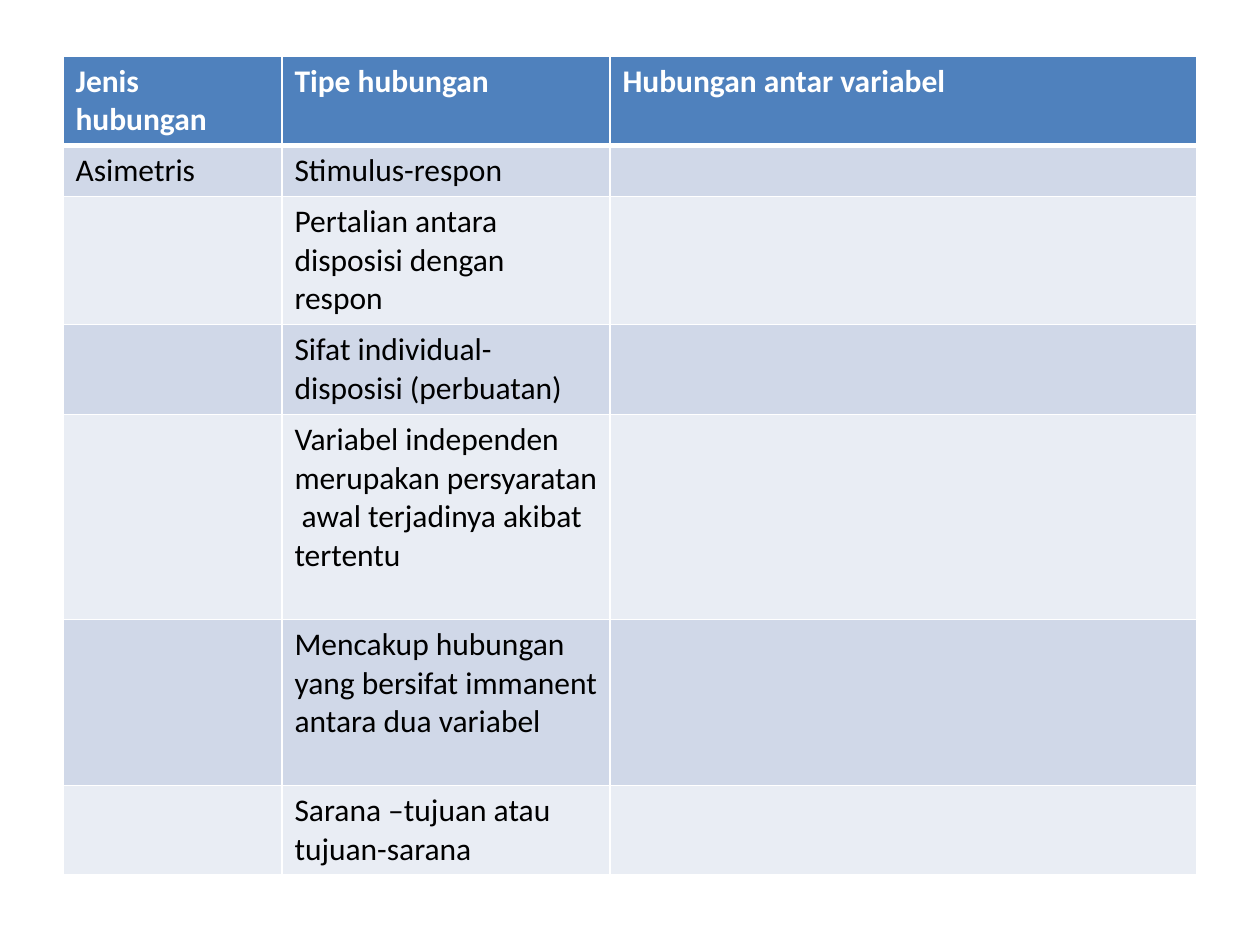
from lxml.etree import SubElement
from pptx import Presentation
from pptx.dml.color import RGBColor
from pptx.oxml.ns import qn
from pptx.util import Pt

PX = 914400 / 126
COLORS = {"head": "4F81BD", "odd": "D0D8E8", "even": "E9EDF4",
          "line": "FFFFFF", "light": "FFFFFF", "dark": "000000"}
WIDTHS = [219, 328, 587]
HEIGHTS = [89, 51, 128, 90, 205, 166, 89]
ROWS = [
    ["Jenis hubungan", "Tipe hubungan", "Hubungan antar variabel"],
    ["Asimetris", "Stimulus-respon", ""],
    ["", "Pertalian antara disposisi dengan respon", ""],
    ["", "Sifat individual-disposisi (perbuatan)", ""],
    ["", "Variabel independen merupakan persyaratan  awal terjadinya akibat tertentu", ""],
    ["", "Mencakup hubungan yang bersifat immanent antara dua variabel", ""],
    ["", "Sarana –tujuan atau tujuan-sarana", ""],
]


def px(n):
    return round(n * PX)


def border(cell, side, width):
    line = SubElement(cell._tc.get_or_add_tcPr(), qn(f"a:ln{side}"), w=str(Pt(width)))
    fill = SubElement(line, qn("a:solidFill"))
    SubElement(fill, qn("a:srgbClr"), val=COLORS["line"])


deck = Presentation()
deck.slide_width, deck.slide_height = px(1260), px(945)
slide = deck.slides.add_slide(deck.slide_layouts[6])
frame = slide.shapes.add_table(len(ROWS), len(WIDTHS), px(63), px(56),
                               px(sum(WIDTHS)), px(sum(HEIGHTS)))
table = frame.table
for col, width in zip(table.columns, WIDTHS):
    col.width = px(width)
for row, height in zip(table.rows, HEIGHTS):
    row.height = px(height)

for r, texts in enumerate(ROWS):
    head = r == 0
    band = "head" if head else "odd" if r % 2 else "even"
    ink = COLORS["light" if head else "dark"]
    style = {"name": "Calibri", "size": Pt(18), "bold": head}
    for c, text in enumerate(texts):
        cell = table.cell(r, c)
        for side in "LRTB":
            thick = (head and side == "B") or (r == 1 and side == "T")
            border(cell, side, 3 if thick else 1)
        cell.fill.solid()
        cell.fill.fore_color.rgb = RGBColor.from_string(COLORS[band])
        cell.text = text
        font = cell.text_frame.paragraphs[0].font
        for key, value in style.items():
            setattr(font, key, value)
        font.color.rgb = RGBColor.from_string(ink)

deck.save("out.pptx")
